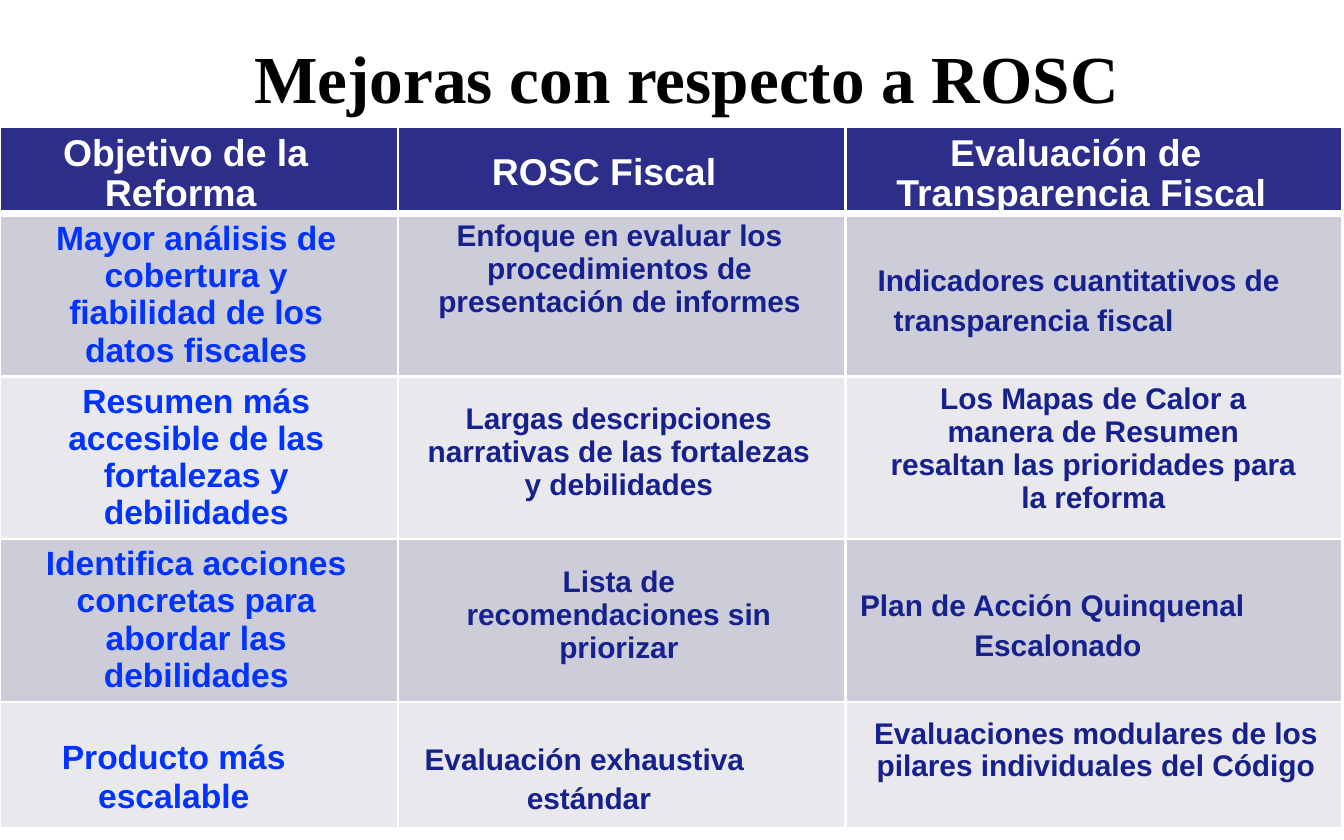
from typing import NamedTuple, Optional

from lxml.etree import SubElement
from pptx import Presentation
from pptx.dml.color import RGBColor
from pptx.enum.text import MSO_ANCHOR, PP_ALIGN
from pptx.oxml import parse_xml
from pptx.oxml.ns import nsdecls, qn
from pptx.util import Inches, Pt

BLACK = RGBColor(0x00, 0x00, 0x00)
WHITE = RGBColor(0xFF, 0xFF, 0xFF)
HEADER_FILL = RGBColor(0x2D, 0x2D, 0x8A)
BAND_FILLS = (RGBColor(0xCD, 0xCD, 0xDA), RGBColor(0xE8, 0xE8, 0xED))
GOAL_BLUE = RGBColor(0x00, 0x33, 0xFF)
BODY_BLUE = RGBColor(0x16, 0x21, 0x8E)

COLUMN_WIDTHS = (2.96, 3.33, 3.7)
ROW_HEIGHTS = (0.63, 1.21, 1.21, 1.21, 0.94)
THIN, THICK = 1.5, 4.25
FIXED_LINE = Pt(21.3)
TIGHT_LINE = 0.99


class Entry(NamedTuple):
    """Cell text; a right margin marks a centred paragraph. Lengths in inches."""
    text: str
    top: float
    left: float
    first_line: float = 0
    right: Optional[float] = None


ROWS = (
    (Entry("Objetivo de la Reforma", 0.06, 0.78, -0.31),
     Entry("ROSC Fiscal", 0.2, 0.7),
     Entry("Evaluación de Transparencia Fiscal", 0.06, 0.38, 0.4)),
    (Entry("Mayor análisis de cobertura y fiabilidad de los datos fiscales",
           0.05, 0.25, right=0.29),
     Entry("Enfoque en evaluar los procedimientos de presentación de informes",
           0.05, 0.17, right=0.2),
     Entry("Indicadores cuantitativos de transparencia fiscal", 0.33, 0.36, -0.12)),
    (Entry("Resumen más accesible de las fortalezas y debilidades",
           0.05, 0.34, right=0.38),
     Entry("Largas descripciones narrativas de las fortalezas y debilidades",
           0.2, 0.17, right=0.21),
     Entry("Los Mapas de Calor a manera de Resumen resaltan las prioridades "
           "para la reforma", 0.05, 0.32, right=0.33)),
    (Entry("Identifica acciones concretas para abordar las debilidades",
           0.05, 0.17, right=0.21),
     Entry("Lista de recomendaciones sin priorizar", 0.2, 0.32, right=0.36),
     Entry("Plan de Acción Quinquenal Escalonado", 0.33, 0.96, -0.85)),
    (Entry("Producto más escalable", 0.26, 0.73, -0.27),
     Entry("Evaluación exhaustiva estándar", 0.26, 0.96, -0.76),
     Entry("Evaluaciones modulares de los pilares individuales del Código",
           0.12, 0.19, right=0.16)),
)


def set_font(paragraph, name: str, size: float, color: RGBColor) -> None:
    font = paragraph.font
    font.name, font.size, font.bold = name, Pt(size), True
    font.color.rgb = color


def set_borders(cell, top: float, bottom: float) -> None:
    properties = cell._tc.get_or_add_tcPr()
    widths = {"lnL": THIN, "lnR": THIN, "lnT": top, "lnB": bottom}
    for position, (tag, width) in enumerate(widths.items()):
        line = parse_xml(f'<a:{tag} {nsdecls("a")} w="{Pt(width)}"/>')
        fill = SubElement(line, qn("a:solidFill"))
        SubElement(fill, qn("a:srgbClr"), val=str(WHITE))
        properties.insert(position, line)


def fill_cell(cell, entry: Entry, row: int, column: int) -> None:
    cell.margin_left = cell.margin_right = cell.margin_bottom = 0
    cell.margin_top = Inches(entry.top)
    cell.vertical_anchor = MSO_ANCHOR.TOP
    cell.fill.solid()
    cell.fill.fore_color.rgb = BAND_FILLS[(row - 1) % 2] if row else HEADER_FILL
    set_borders(cell, THICK if row == 1 else THIN, THIN if row else THICK)

    cell.text = entry.text
    paragraph = cell.text_frame.paragraphs[0]
    properties = paragraph._p.get_or_add_pPr()
    properties.set("marL", str(Inches(entry.left)))
    properties.set("indent", str(Inches(entry.first_line)))
    if entry.right is None:
        paragraph.alignment = PP_ALIGN.LEFT
        paragraph.line_spacing = FIXED_LINE
    else:
        properties.set("marR", str(Inches(entry.right)))
        paragraph.alignment = PP_ALIGN.CENTER
        paragraph.line_spacing = TIGHT_LINE
    if row == 0:
        set_font(paragraph, "Arial", 20, WHITE)
    elif column == 0:
        set_font(paragraph, "Arial", 18, GOAL_BLUE)
    else:
        set_font(paragraph, "Arial", 16, BODY_BLUE)


def add_title(slide) -> None:
    title = slide.shapes.title
    title.left, title.top = Inches(0.89), Inches(0)
    title.width, title.height = Inches(8.44), Inches(1.21)
    title.text_frame.text = "Mejoras con respecto a ROSC"
    title.text_frame.vertical_anchor = MSO_ANCHOR.MIDDLE
    paragraph = title.text_frame.paragraphs[0]
    paragraph.alignment = PP_ALIGN.CENTER
    paragraph.line_spacing = 0.9
    set_font(paragraph, "Times New Roman", 36, BLACK)


def add_comparison_table(slide) -> None:
    table = slide.shapes.add_table(
        len(ROWS), len(COLUMN_WIDTHS), Inches(0), Inches(0.94),
        Inches(sum(COLUMN_WIDTHS)), Inches(sum(ROW_HEIGHTS))).table
    for column, width in zip(table.columns, COLUMN_WIDTHS):
        column.width = Inches(width)
    for table_row, height in zip(table.rows, ROW_HEIGHTS):
        table_row.height = Inches(height)
    for row, entries in enumerate(ROWS):
        for column, entry in enumerate(entries):
            fill_cell(table.cell(row, column), entry, row, column)


def main() -> None:
    presentation = Presentation()
    presentation.slide_width = Inches(10)
    presentation.slide_height = Inches(6.25)
    slide = presentation.slides.add_slide(presentation.slide_layouts[5])
    add_title(slide)
    add_comparison_table(slide)
    presentation.save("out.pptx")


if __name__ == "__main__":
    main()
